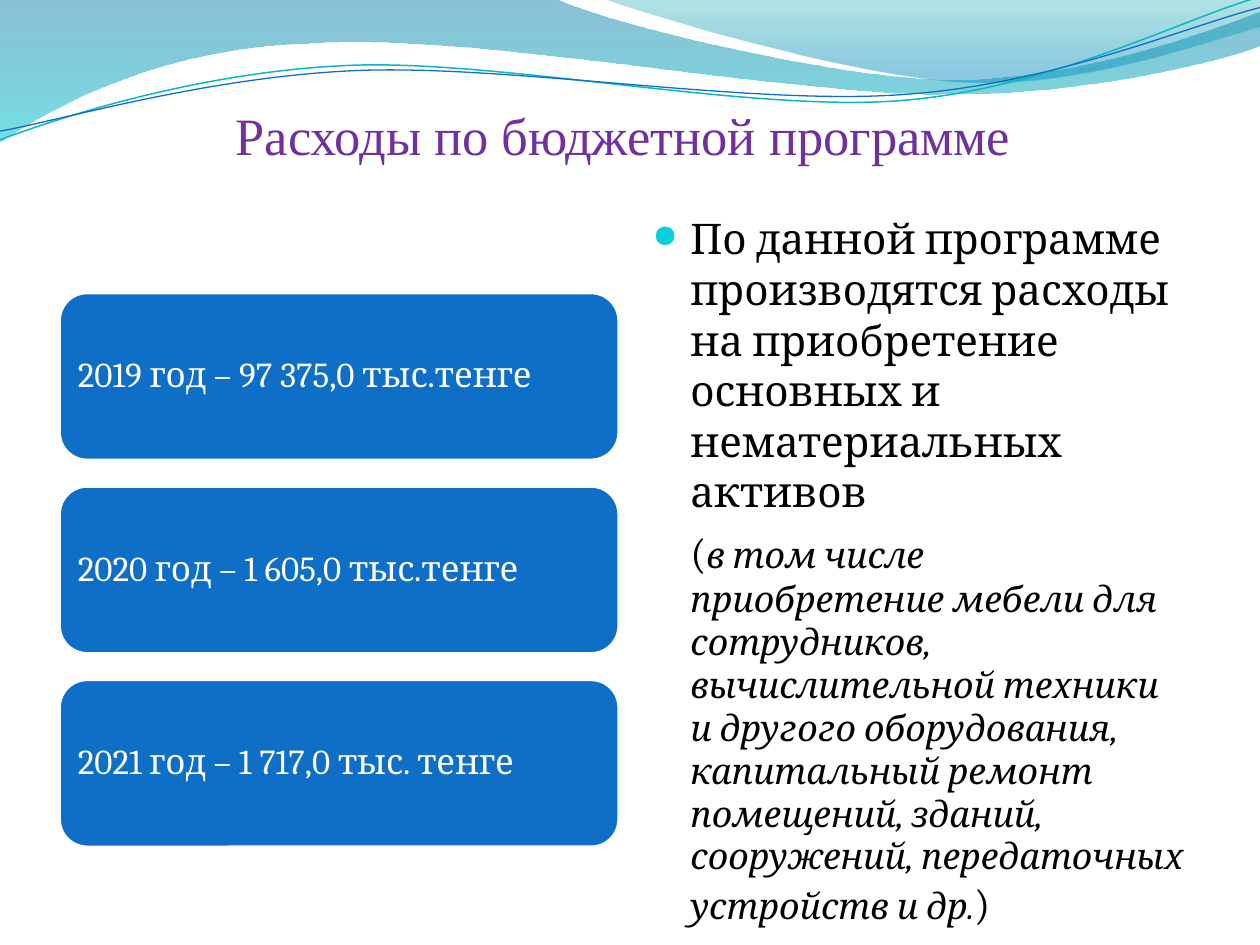
from dataclasses import dataclass

from lxml import etree
from pptx import Presentation
from pptx.dml.color import RGBColor
from pptx.enum.shapes import MSO_SHAPE
from pptx.enum.text import MSO_ANCHOR, PP_ALIGN
from pptx.oxml.ns import qn
from pptx.util import Pt

ROUNDED = MSO_SHAPE.ROUNDED_RECTANGLE
TOP, MIDDLE = MSO_ANCHOR.TOP, MSO_ANCHOR.MIDDLE
LEFT, CENTER = PP_ALIGN.LEFT, PP_ALIGN.CENTER


@dataclass(frozen=True)
class Theme:
    title_font: str = "Times New Roman"
    body_font: str = "Cambria"
    title_size: float = 30
    card_size: float = 20
    body_size: float = 24.1
    detail_size: float = 20.4
    title: str = "7030A0"
    blue: str = "0F6FC6"
    teal: str = "0AB8BF"
    bullet: str = "0BD0D9"
    white: str = "FFFFFF"
    black: str = "000000"


THEME = Theme()

# Each gradient stop: position, colour, opacity in percent
DARK_WAVE = [(0, "0074A1", 45), (1, "00C6CF", 55)]
LIGHT_WAVE = [(0, "00A1A9", 30), (0.8, "008BBF", 45)]

# Outlines in points: a pair is a straight step, six numbers are a Bézier curve
DARK_OUTLINE = [
    (0, 0), (317.5, -0.7), (342.7, 12.2, 478, 45.4, 545.8, 45.4),
    (614.2, 45.4, 689.8, 18.7, 720, 6.5), (720.7, 26),
    (707.8, 31.7, 626.4, 54.7, 537, 54), (447.8, 54, 275, 20.2, 185, 24.5),
    (92.9, 26, 33, 59.8, -0.7, 81.4), (0, 0)]
LIGHT_OUTLINE = [
    (344.9, -0.7), (366.5, 7.9, 491, 44.6, 553.7, 46.8),
    (616.3, 49.7, 692, 23, 720, 15.1), (720, 0), (344.9, -0.7)]
TEAL_LINE = [
    (0, 79.9), (34.6, 67, 113.8, 41, 199.4, 37.4),
    (284.4, 33.8, 427, 64.1, 513.4, 57.6),
    (599.8, 51.1, 675.4, 10.8, 718.6, -1.4)]
BLUE_LINE = [
    (0, 74.9), (33.8, 69.1, 118, 43.9, 203.8, 40.3),
    (290.2, 36.7, 429.8, 60.5, 516.2, 54),
    (602, 48.2, 677.5, 15.1, 720, 4.3)]

YEARS = ["2019 год – 97 375,0 тыс.тенге",
         "2020 год – 1 605,0 тыс.тенге",
         "2021 год – 1 717,0 тыс. тенге"]
PURPOSE = ("По данной программе производятся расходы на приобретение "
           "основных и нематериальных активов")
DETAILS = ("в том числе приобретение мебели для сотрудников, вычислительной "
           "техники и другого оборудования, капитальный ремонт помещений, "
           "зданий, сооружений, передаточных устройств и др.")


def color(value):
    return RGBColor.from_string(value)


def setup_frame(shape, anchor, insets):
    frame = shape.text_frame
    frame.word_wrap = True
    frame.vertical_anchor = anchor
    (frame.margin_left, frame.margin_top,
     frame.margin_right, frame.margin_bottom) = map(Pt, insets)
    return frame


def add_text(paragraph, text, *, font, size, ink, italic=False, align=LEFT, spacing=1):
    paragraph.alignment = align
    paragraph.line_spacing = spacing
    run = paragraph.add_run()
    run.text = text
    run.font.name = font
    run.font.size = Pt(size)
    run.font.italic = italic
    run.font.color.rgb = color(ink)


def indent(paragraph, left, first=0, bullet=None):
    properties = paragraph._p.get_or_add_pPr()
    properties.set("marL", str(Pt(left)))
    properties.set("indent", str(Pt(first)))
    if bullet:
        bullet_color = etree.SubElement(properties, qn("a:buClr"))
        etree.SubElement(bullet_color, qn("a:srgbClr"), val=bullet)
        etree.SubElement(properties, qn("a:buSzPct"), val="75000")
        etree.SubElement(properties, qn("a:buChar"), char="●")


def add_outline(slide, left, top, outline, close):
    """Draw the steps through all their points, then join triples into curves."""
    points = [(Pt(left + step[i]), Pt(top + step[i + 1]))
              for step in outline for i in range(0, len(step), 2)]
    builder = slide.shapes.build_freeform(*points[0])
    builder.add_line_segments(points[1:], close=close)
    shape = builder.convert_to_shape()
    shape.shadow.inherit = False
    segments = iter(list(shape.element.iter(qn("a:lnTo"))))
    for step in outline[1:]:
        segment = next(segments)
        if len(step) == 6:
            segment.tag = qn("a:cubicBezTo")
            for _ in range(2):
                extra = next(segments)
                segment.append(extra[0])
                extra.getparent().remove(extra)
    return shape


def add_waves(slide, left, top):
    for outline, stops in ((DARK_OUTLINE, DARK_WAVE), (LIGHT_OUTLINE, LIGHT_WAVE)):
        wave = add_outline(slide, left, top, outline, True)
        wave.line.fill.background()
        wave.fill.gradient()
        wave.fill.gradient_angle = 270
        for stop, (position, value, _) in zip(wave.fill.gradient_stops, stops):
            stop.position = position
            stop.color.rgb = color(value)
        tints = wave.element.spPr.iter(qn("a:srgbClr"))
        for tint, (_, _, opacity) in zip(tints, stops):
            etree.SubElement(tint, qn("a:alpha"), val=str(opacity * 1000))
    for outline, ink, width in ((TEAL_LINE, THEME.teal, 0.85),
                                (BLUE_LINE, THEME.blue, 0.75)):
        line = add_outline(slide, left, top, outline, False)
        line.fill.background()
        line.line.color.rgb = color(ink)
        line.line.width = Pt(width)


def add_title(slide, left, top, width, height):
    box = slide.shapes.add_textbox(Pt(left), Pt(top), Pt(width), Pt(height))
    frame = setup_frame(box, TOP, (0, 3.6, 0, 0))
    add_text(frame.paragraphs[0], "Расходы по бюджетной программе ", font=THEME.title_font,
             size=THEME.title_size, ink=THEME.title, align=CENTER)


def add_year_cards(slide, left, top, width, height, gap=14.6):
    card_height = (height - gap * (len(YEARS) - 1)) / len(YEARS)
    for index, text in enumerate(YEARS):
        card_top = top + index * (card_height + gap)
        card = slide.shapes.add_shape(ROUNDED, Pt(left), Pt(card_top),
                                      Pt(width), Pt(card_height))
        card.shadow.inherit = False
        card.fill.solid()
        card.fill.fore_color.rgb = color(THEME.blue)
        card.line.color.rgb = color(THEME.white)
        card.line.width = Pt(2)
        # The preset insets its own text area by about 4.7 pt
        frame = setup_frame(card, MIDDLE, (6,) * 4)
        add_text(frame.paragraphs[0], text, font=THEME.body_font, size=THEME.card_size,
                 ink=THEME.white, spacing=0.9)


def add_description(slide, left, top, width, height):
    box = slide.shapes.add_textbox(Pt(left), Pt(top), Pt(width), Pt(height))
    frame = setup_frame(box, MIDDLE, (7.2, 3.6, 7.2, 3.6))
    style = {"font": THEME.body_font, "ink": THEME.black}
    purpose, details = frame.paragraphs[0], frame.add_paragraph()
    for paragraph in (purpose, details):
        paragraph.space_before = Pt(5.8)
    add_text(purpose, PURPOSE, size=THEME.body_size, **style)
    indent(purpose, 21.6, -21.6, THEME.bullet)
    add_text(details, "(", size=THEME.body_size, **style)
    add_text(details, DETAILS, size=THEME.detail_size, italic=True, **style)
    add_text(details, ")", size=THEME.body_size, **style)
    indent(details, 21.6)


def main():
    presentation = Presentation()
    presentation.slide_width, presentation.slide_height = Pt(720), Pt(540)
    slide = presentation.slides.add_slide(presentation.slide_layouts[6])
    add_waves(slide, 0, 0)
    add_title(slide, 36, 55.4, 648, 90)
    add_year_cards(slide, 33.8, 167.2, 320, 317)
    add_description(slide, 365.8, 151.2, 318.2, 349.2)
    presentation.save("out.pptx")


if __name__ == "__main__":
    main()
